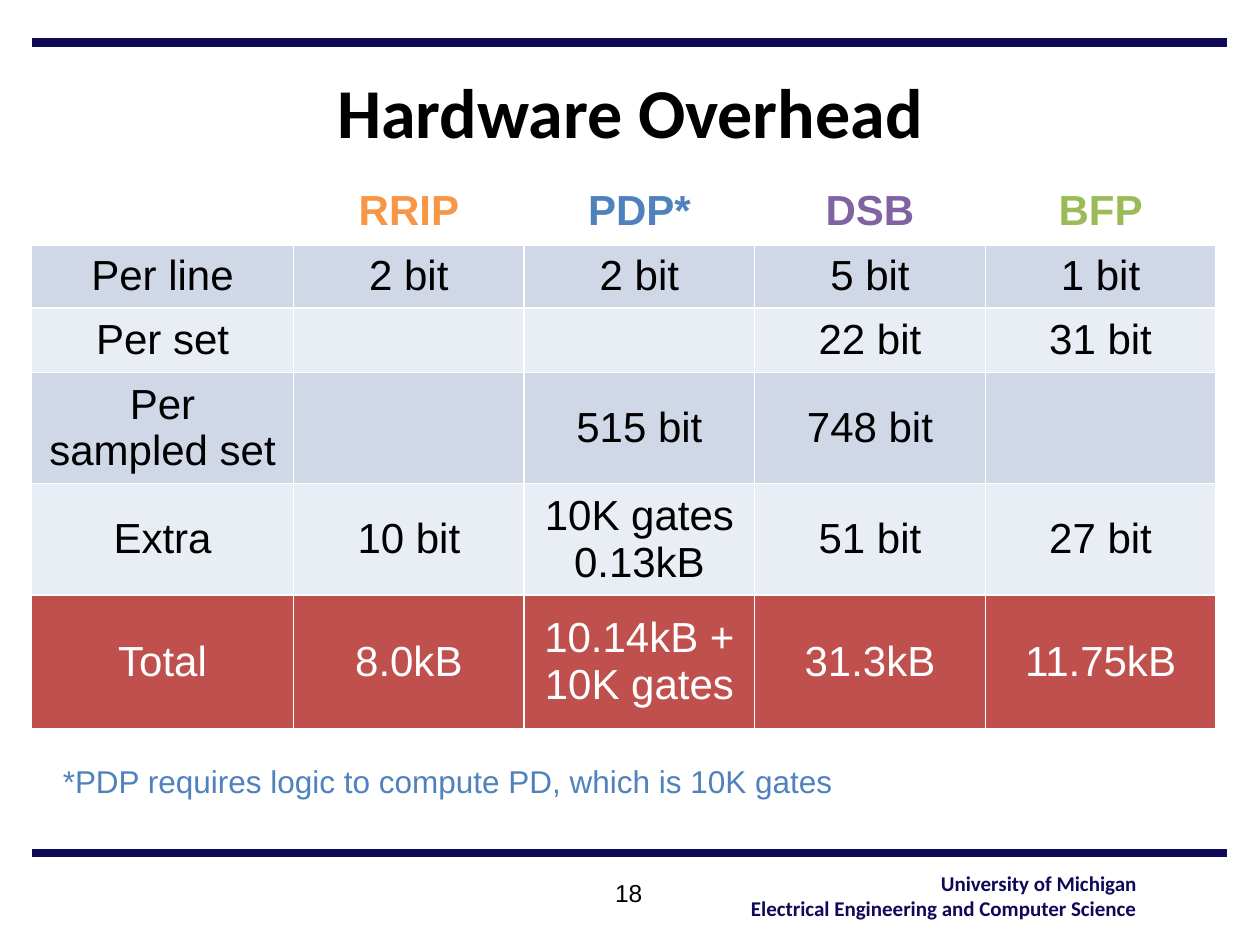
from lxml.etree import SubElement
from pptx import Presentation
from pptx.dml.color import RGBColor
from pptx.enum.shapes import MSO_CONNECTOR
from pptx.enum.text import MSO_ANCHOR as Anchor, PP_ALIGN as Align
from pptx.oxml import parse_xml
from pptx.oxml.ns import nsdecls, qn
from pptx.util import Inches, Pt


def color(hex_code):
    return RGBColor.from_string(hex_code)


def write(frame, text, size=24, font="Arial", ink="000000", bold=False,
          align=Align.CENTER, anchor=Anchor.MIDDLE, wrap=True):
    frame.word_wrap = wrap
    frame.vertical_anchor = anchor
    para = frame.paragraphs[0]
    para.text = text
    para.alignment = align
    for span in para.runs:
        span.font.size = Pt(size)
        span.font.name = font
        span.font.bold = bold
        span.font.color.rgb = color(ink)


NAVY, BLUE, WHITE = "0F0958", "4F81BD", "FFFFFF"

deck = Presentation()
deck.slide_width, deck.slide_height = Inches(10), Inches(7.5)
page = deck.slides.add_slide(deck.slide_layouts[5])

# Rules above and below the content
for y in (0.34, 6.77):
    rule = page.shapes.add_connector(
        MSO_CONNECTOR.STRAIGHT, Inches(0.25), Inches(y), Inches(9.74), Inches(y))
    rule.line.color.rgb = color(NAVY)
    rule.line.width = Pt(5)
    SubElement(rule._element.spPr, qn("a:effectLst"))

# Title
title = page.shapes.title
title.left, title.top = Inches(0.75), Inches(0.42)
title.width, title.height = Inches(8.5), Inches(0.91)
write(title.text_frame, "Hardware Overhead", size=40, font="Calibri", bold=True)

# Overhead table
rows = [
    ["", "RRIP", "PDP*", "DSB", "BFP"],
    ["Per line", "2 bit", "2 bit", "5 bit", "1 bit"],
    ["Per set", "", "", "22 bit", "31 bit"],
    ["Per\nsampled set", "", "515 bit", "748 bit", ""],
    ["Extra", "10 bit", "10K gates\n0.13kB", "51 bit", "27 bit"],
    ["Total", "8.0kB", "10.14kB + 10K gates", "31.3kB", "11.75kB"],
]
row_fills = [WHITE, "D0D8E8", "E9EDF4", "D0D8E8", "E9EDF4", "C0504D"]
row_heights = [0.5, 0.5, 0.5, 0.88, 0.88, 1.06]
column_widths = [2.08] + [1.83] * 4
header_inks = ["000000", "F79646", BLUE, "8064A2", "9BBB59"]

table = page.shapes.add_table(
    len(rows), len(column_widths), Inches(0.25), Inches(1.42),
    Inches(sum(column_widths)), Inches(sum(row_heights))).table
for column, width in zip(table.columns, column_widths):
    column.width = Inches(width)
for r, (texts, fill, height) in enumerate(zip(rows, row_fills, row_heights)):
    table.rows[r].height = Inches(height)
    for c, text in enumerate(texts):
        cell = table.cell(r, c)
        ink = header_inks[c] if r == 0 else WHITE if texts[0] == "Total" else "000000"
        cell.margin_left = cell.margin_right = Inches(0.14)
        cell.margin_top = cell.margin_bottom = Inches(0.07)
        cell.vertical_anchor = Anchor.MIDDLE
        if text:
            write(cell.text_frame, text, ink=ink, bold=r == 0, anchor=None, wrap=None)
        # Borders come before the fill in the cell properties
        for side in ("lnL", "lnR", "lnT", "lnB"):
            thick = (r == 0 and side == "lnB") or (r == 1 and side == "lnT")
            cell._tc.get_or_add_tcPr().append(parse_xml(
                f'<a:{side} {nsdecls("a")} w="{Pt(3 if thick else 1)}"><a:solidFill>'
                f'<a:srgbClr val="{WHITE}"/></a:solidFill></a:{side}>'))
        cell.fill.solid()
        cell.fill.fore_color.rgb = color(fill)

# Footnote, page number and affiliation
notes = [
    ((0.4, 6, 6.44, 0.4), "*PDP requires logic to compute PD, which is 10K gates",
     dict(size=18, ink=BLUE, align=Align.LEFT, wrap=False)),
    ((3.95, 6.92, 2.08, 0.5), "18", dict(size=14)),
    ((5.82, 6.86, 3.3, 0.5),
     "University of Michigan\nElectrical Engineering and Computer Science",
     dict(size=12, font="Calibri", ink=NAVY, bold=True, align=Align.RIGHT, wrap=False)),
]
for place, text, style in notes:
    box = page.shapes.add_textbox(*map(Inches, place))
    first, *others = text.split("\n")
    write(box.text_frame, first, anchor=Anchor.TOP, **style)
    for line in others:
        para = box.text_frame.add_paragraph()
        para.alignment = style["align"]
        span = para.add_run()
        span.text = line
        span.font.size, span.font.name = Pt(style["size"]), style["font"]
        span.font.bold = style["bold"]
        span.font.color.rgb = color(style["ink"])

deck.save("out.pptx")
